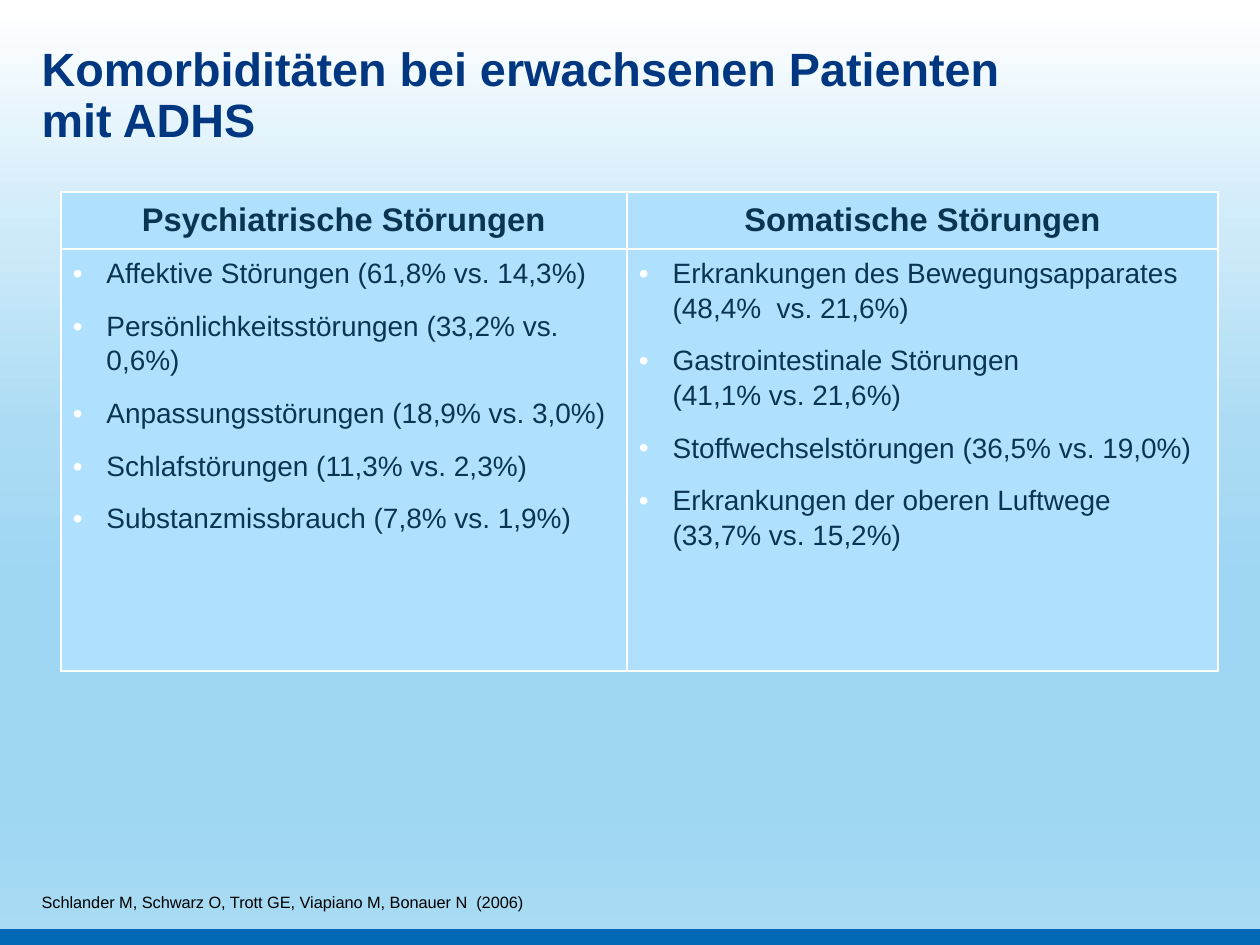
import pptx
import pptx.dml.color
import pptx.enum.shapes
import pptx.enum.text
import pptx.oxml
import pptx.oxml.ns
import pptx.util

Cm = pptx.util.Cm
Pt = pptx.util.Pt
ANCHOR = pptx.enum.text.MSO_ANCHOR
ALIGN = pptx.enum.text.PP_ALIGN
NAMESPACE = pptx.oxml.ns.nsdecls("a")

COLORS = {
    "title": "003780",
    "text": "0A3550",
    "source": "000000",
    "cell": "AFE1FF",
    "line": "FFFFFF",
    "bar": "0169B8",
}
SKY = {0: "FFFFFF", 2: "FDFEFF", 25: "CDEAF9", 45: "ACDCF4",
       62: "9FD6F4", 85: "9FD6F4", 100: "A9DBF3"}

TITLE = "Komorbiditäten bei erwachsenen Patienten \nmit ADHS"
SOURCE = "Schlander M, Schwarz O, Trott GE, Viapiano M, Bonauer N  (2006)"
DISORDERS = {
    "Psychiatrische Störungen": [
        "Affektive Störungen (61,8% vs. 14,3%)",
        "Persönlichkeitsstörungen (33,2% vs. 0,6%)",
        "Anpassungsstörungen (18,9% vs. 3,0%)",
        "Schlafstörungen (11,3% vs. 2,3%)",
        "Substanzmissbrauch (7,8% vs. 1,9%)",
    ],
    "Somatische Störungen": [
        "Erkrankungen des Bewegungsapparates\n(48,4%  vs. 21,6%)",
        "Gastrointestinale Störungen \n(41,1% vs. 21,6%)",
        "Stoffwechselstörungen (36,5% vs. 19,0%)",
        "Erkrankungen der oberen Luftwege\n(33,7% vs. 15,2%)",
    ],
}


def rgb(name):
    return pptx.dml.color.RGBColor.from_string(COLORS[name])


def set_font(para, size, color, bold=False):
    para.font.name = "Arial"
    para.font.size = Pt(size)
    para.font.bold = bold
    para.font.color.rgb = rgb(color)


def add_panel(page, box):
    panel = page.shapes.add_shape(pptx.enum.shapes.MSO_SHAPE.RECTANGLE, *box)
    panel.shadow.inherit = False
    panel.line.fill.background()
    return panel


def add_background(page, box):
    left, top, width, height = box
    sky = add_panel(page, box)
    sky.fill.gradient()
    sky.fill.gradient_angle = 270
    stops = sky.element.spPr.find(".//" + pptx.oxml.ns.qn("a:gsLst"))
    stops.clear()
    for position, color in SKY.items():
        stops.append(pptx.oxml.parse_xml(
            f'<a:gs {NAMESPACE} pos="{position * 1000}">'
            f'<a:srgbClr val="{color}"/></a:gs>'))
    bar_height = Cm(0.24)
    bar = add_panel(page, (left, top + height - bar_height, width, bar_height))
    bar.fill.solid()
    bar.fill.fore_color.rgb = rgb("bar")


def add_text(page, box, text, size, color, bold=False, anchor=ANCHOR.TOP):
    frame = page.shapes.add_textbox(*box).text_frame
    frame.word_wrap = True
    frame.vertical_anchor = anchor
    para = frame.paragraphs[0]
    para.text = text
    set_font(para, size, color, bold)
    return para


def style_cell(cell):
    cell.margin_left = cell.margin_right = Cm(0.18)
    cell.margin_top = cell.margin_bottom = Cm(0.1)
    properties = cell._tc.get_or_add_tcPr()
    for side in ("lnL", "lnR", "lnT", "lnB"):
        properties.append(pptx.oxml.parse_xml(
            f'<a:{side} {NAMESPACE} w="{Pt(1)}"><a:solidFill>'
            f'<a:srgbClr val="{COLORS["line"]}"/></a:solidFill></a:{side}>'))
    cell.fill.solid()
    cell.fill.fore_color.rgb = rgb("cell")


def add_bullet(para):
    properties = para._p.get_or_add_pPr()
    indent = Cm(0.51)
    properties.set("marL", str(indent))
    properties.set("indent", str(-indent))
    for bullet in (
        f'<a:buClr {NAMESPACE}><a:srgbClr val="{COLORS["line"]}"/></a:buClr>',
        f'<a:buFont {NAMESPACE} typeface="Arial"/>',
        f'<a:buChar {NAMESPACE} char="•"/>',
    ):
        properties.append(pptx.oxml.parse_xml(bullet))


def fill_header(cell, heading):
    style_cell(cell)
    cell.vertical_anchor = ANCHOR.MIDDLE
    para = cell.text_frame.paragraphs[0]
    para.text = heading
    para.alignment = ALIGN.CENTER
    set_font(para, 14, "text", bold=True)


def fill_list(cell, items):
    style_cell(cell)
    frame = cell.text_frame
    for number, item in enumerate(items):
        para = frame.add_paragraph() if number else frame.paragraphs[0]
        para.text = item
        para.line_spacing = 1.1
        para.space_before = Pt(3)
        para.space_after = Pt(4.8)
        add_bullet(para)
        set_font(para, 12, "text")


def add_disorder_table(page, box):
    left, top, width, height = box
    table = page.shapes.add_table(2, len(DISORDERS), *box).table
    first_width, header_height = Cm(8.56), Cm(0.86)
    table.columns[0].width = first_width
    table.columns[1].width = width - first_width
    table.rows[0].height = header_height
    table.rows[1].height = height - header_height
    for column, (heading, items) in enumerate(DISORDERS.items()):
        fill_header(table.cell(0, column), heading)
        fill_list(table.cell(1, column), items)


def main():
    deck = pptx.Presentation()
    deck.slide_width, deck.slide_height = Cm(19.05), Cm(14.29)
    page = deck.slides.add_slide(deck.slide_layouts[6])
    add_background(page, (0, 0, deck.slide_width, deck.slide_height))
    add_disorder_table(page, (Cm(0.92), Cm(2.9), Cm(17.5), Cm(7.24)))
    add_text(page, (Cm(0.38), Cm(12.32), Cm(15.14), Cm(1.6)),
             SOURCE, 7, "source", anchor=ANCHOR.BOTTOM).space_after = Pt(3)
    add_text(page, (Cm(0.38), Cm(0.58), Cm(18.31), Cm(2.16)),
             TITLE, 20, "title", bold=True).line_spacing = 0.9
    deck.save("out.pptx")


if __name__ == "__main__":
    main()
